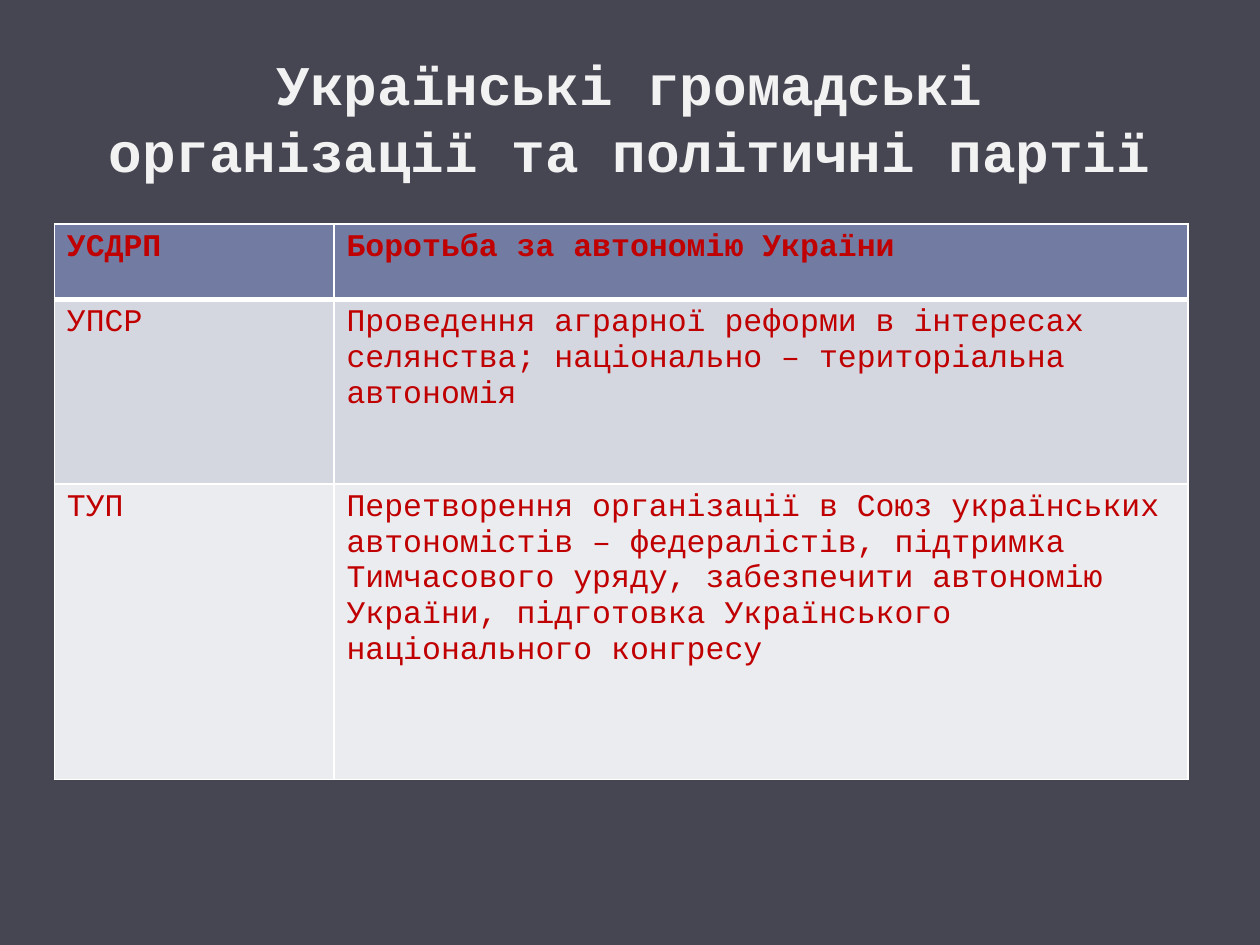
from lxml.etree import SubElement
from pptx import Presentation
from pptx.dml.color import RGBColor
from pptx.enum.text import MSO_ANCHOR, PP_ALIGN
from pptx.oxml.ns import qn
from pptx.util import Pt


def color(code):
    return RGBColor.from_string(code)


class Deck:
    font = "Courier New"
    back, light, red, white = "464653", "F2F2F2", "C00000", "FFFFFF"
    head, bands = "727CA3", ("D5D7E0", "EBECF0")

    def __init__(self, wide, high):
        self.show = Presentation()
        self.show.slide_width, self.show.slide_height = Pt(wide), Pt(high)
        self.slide = self.show.slides.add_slide(self.show.slide_layouts[5])
        fill = self.slide.background.fill
        fill.solid()
        fill.fore_color.rgb = color(self.back)

    def add_text(self, para, text, size, tint, bold):
        run = para.add_run()
        run.text = text
        font = run.font
        font.name, font.size, font.bold = self.font, Pt(size), bold
        font.color.rgb = color(tint)

    def title(self, text, left, top, wide, high):
        box = self.slide.shapes.title
        box.left, box.top, box.width, box.height = map(Pt, (left, top, wide, high))
        frame = box.text_frame
        frame.word_wrap = True
        frame.vertical_anchor = MSO_ANCHOR.MIDDLE
        para = frame.paragraphs[0]
        para.alignment = PP_ALIGN.CENTER
        self.add_text(para, text, 32, self.light, True)

    def border(self, cell, widths):
        props = cell._tc.get_or_add_tcPr()
        for side, width in widths.items():
            line = SubElement(props, qn("a:ln" + side), w=str(Pt(width)))
            fill = SubElement(line, qn("a:solidFill"))
            SubElement(fill, qn("a:srgbClr"), val=self.white)

    def table(self, rows, left, top, cols, highs):
        grid = self.slide.shapes.add_table(
            len(rows), len(cols), Pt(left), Pt(top), Pt(sum(cols)), Pt(sum(highs))
        ).table
        for col, wide in zip(grid.columns, cols):
            col.width = Pt(wide)
        for i, (row, high) in enumerate(zip(rows, highs)):
            grid.rows[i].height = Pt(high)
            # A thick rule parts the header from the body
            rules = {"L": 1, "R": 1, "T": 3 if i == 1 else 1, "B": 3 if i == 0 else 1}
            tint = self.bands[(i - 1) % 2] if i else self.head
            for j, text in enumerate(row):
                cell = grid.cell(i, j)
                self.border(cell, rules)
                cell.fill.solid()
                cell.fill.fore_color.rgb = color(tint)
                self.add_text(cell.text_frame.paragraphs[0], text, 18, self.red, i == 0)


def main():
    deck = Deck(720, 540)

    # Title
    deck.title("Українські громадські організації та політичні партії", 36, 21.6, 648, 90)

    # Parties and their aims
    rows = [
        ("УСДРП", "Боротьба за автономію України"),
        ("УПСР", "Проведення аграрної реформи в інтересах селянства; "
                 "національно – територіальна автономія"),
        ("ТУП", "Перетворення організації в Союз українських автономістів – "
                "федералістів, підтримка Тимчасового уряду, забезпечити автономію "
                "України, підготовка Українського національного конгресу"),
    ]
    deck.table(rows, 31, 128, (159.8, 488.2), (43, 105.5, 169))

    deck.show.save("out.pptx")


if __name__ == "__main__":
    main()
